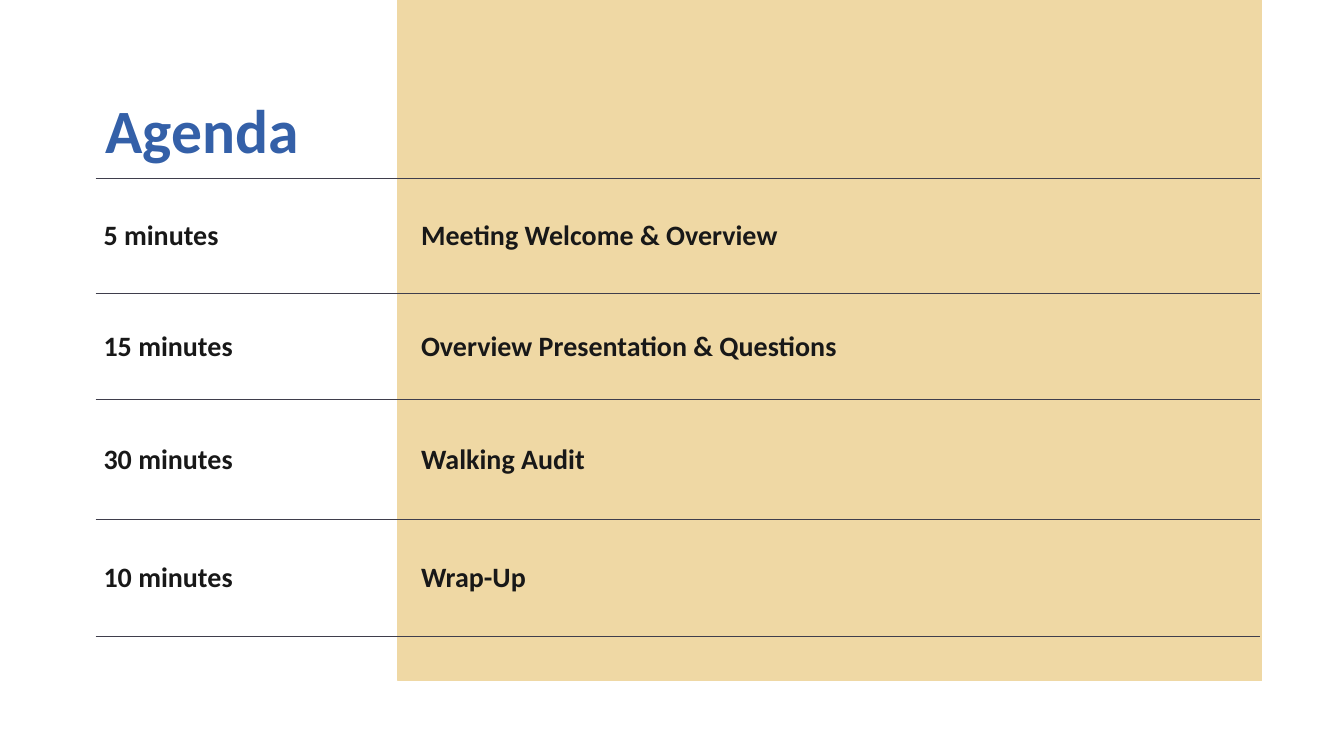
from dataclasses import dataclass

from lxml import etree
from pptx import Presentation
from pptx.dml.color import RGBColor
from pptx.enum.shapes import MSO_SHAPE
from pptx.enum.text import MSO_ANCHOR
from pptx.oxml.ns import qn
from pptx.slide import Slide
from pptx.table import _Cell
from pptx.text.text import _Paragraph
from pptx.util import Cm, Pt

RECTANGLE = MSO_SHAPE.RECTANGLE
TOP = MSO_ANCHOR.TOP
MIDDLE = MSO_ANCHOR.MIDDLE

FONT = "Calibri"
COLORS = {"panel": "EFD8A4", "title": "3460A8", "text": "181818", "rule": "3F3E4C"}
LEFT = 2.41
COLUMN_WIDTHS = (8.0, 21.34)


@dataclass(frozen=True)
class AgendaItem:
    duration: str
    topic: str
    height: float
    space_after: float = 4


AGENDA = (
    AgendaItem("5 minutes", "Meeting Welcome & Overview", 2.9, 0),
    AgendaItem("15 minutes", "Overview Presentation & Questions", 2.67),
    AgendaItem("30 minutes", "Walking Audit", 3.02),
    AgendaItem("10 minutes", "Wrap-Up", 2.95),
)


def color(name: str) -> RGBColor:
    return RGBColor.from_string(COLORS[name])


def style_text(paragraph: _Paragraph, size: float, color_name: str) -> None:
    for run in paragraph.runs:
        run.font.name = FONT
        run.font.size = Pt(size)
        run.font.bold = True
        run.font.color.rgb = color(color_name)


def rule_cell(cell: _Cell) -> None:
    properties = cell._tc.get_or_add_tcPr()
    for position, side in enumerate(("lnL", "lnR", "lnT", "lnB")):
        border = etree.Element(qn(f"a:{side}"), w=str(Pt(1)))
        if side in ("lnT", "lnB"):
            fill = etree.SubElement(border, qn("a:solidFill"))
            etree.SubElement(fill, qn("a:srgbClr"), val=COLORS["rule"])
        else:
            etree.SubElement(border, qn("a:noFill"))
        properties.insert(position, border)


def draw_panel(slide: Slide) -> None:
    panel = slide.shapes.add_shape(RECTANGLE, Cm(10.03), Cm(0), Cm(21.77), Cm(17.15))
    panel.shadow.inherit = False
    panel.fill.solid()
    panel.fill.fore_color.rgb = color("panel")
    panel.line.color.rgb = color("panel")
    panel.line.width = Pt(1)


def draw_title(slide: Slide) -> None:
    title = slide.shapes.add_textbox(Cm(LEFT), Cm(2.41), Cm(6.81), Cm(7.34))
    frame = title.text_frame
    frame.word_wrap = True
    frame.vertical_anchor = TOP
    frame.text = "Agenda"
    frame.paragraphs[0].line_spacing = 0.9
    style_text(frame.paragraphs[0], 44, "title")


def fill_cell(cell: _Cell, text: str, space_after: float) -> None:
    cell.fill.background()
    rule_cell(cell)
    cell.vertical_anchor = MIDDLE
    cell.margin_left = cell.margin_right = Cm(0.2)
    cell.margin_top = cell.margin_bottom = Cm(0.51)
    cell.text_frame.text = text
    paragraph = cell.text_frame.paragraphs[0]
    paragraph.space_after = Pt(space_after)
    style_text(paragraph, 20, "text")


def draw_agenda(slide: Slide) -> None:
    total_height = sum(item.height for item in AGENDA)
    agenda = slide.shapes.add_table(
        len(AGENDA), len(COLUMN_WIDTHS),
        Cm(LEFT), Cm(4.5), Cm(sum(COLUMN_WIDTHS)), Cm(total_height),
    ).table
    agenda.first_row = False
    agenda.horz_banding = False
    for column, width in zip(agenda.columns, COLUMN_WIDTHS):
        column.width = Cm(width)
    for row, item in zip(agenda.rows, AGENDA):
        row.height = Cm(item.height)
        for cell, text in zip(row.cells, (item.duration, item.topic)):
            fill_cell(cell, text, item.space_after)


def main() -> None:
    presentation = Presentation()
    presentation.slide_width = Cm(33.87)
    presentation.slide_height = Cm(19.05)
    slide = presentation.slides.add_slide(presentation.slide_layouts[6])
    draw_panel(slide)
    draw_title(slide)
    draw_agenda(slide)
    presentation.save("out.pptx")


if __name__ == "__main__":
    main()
